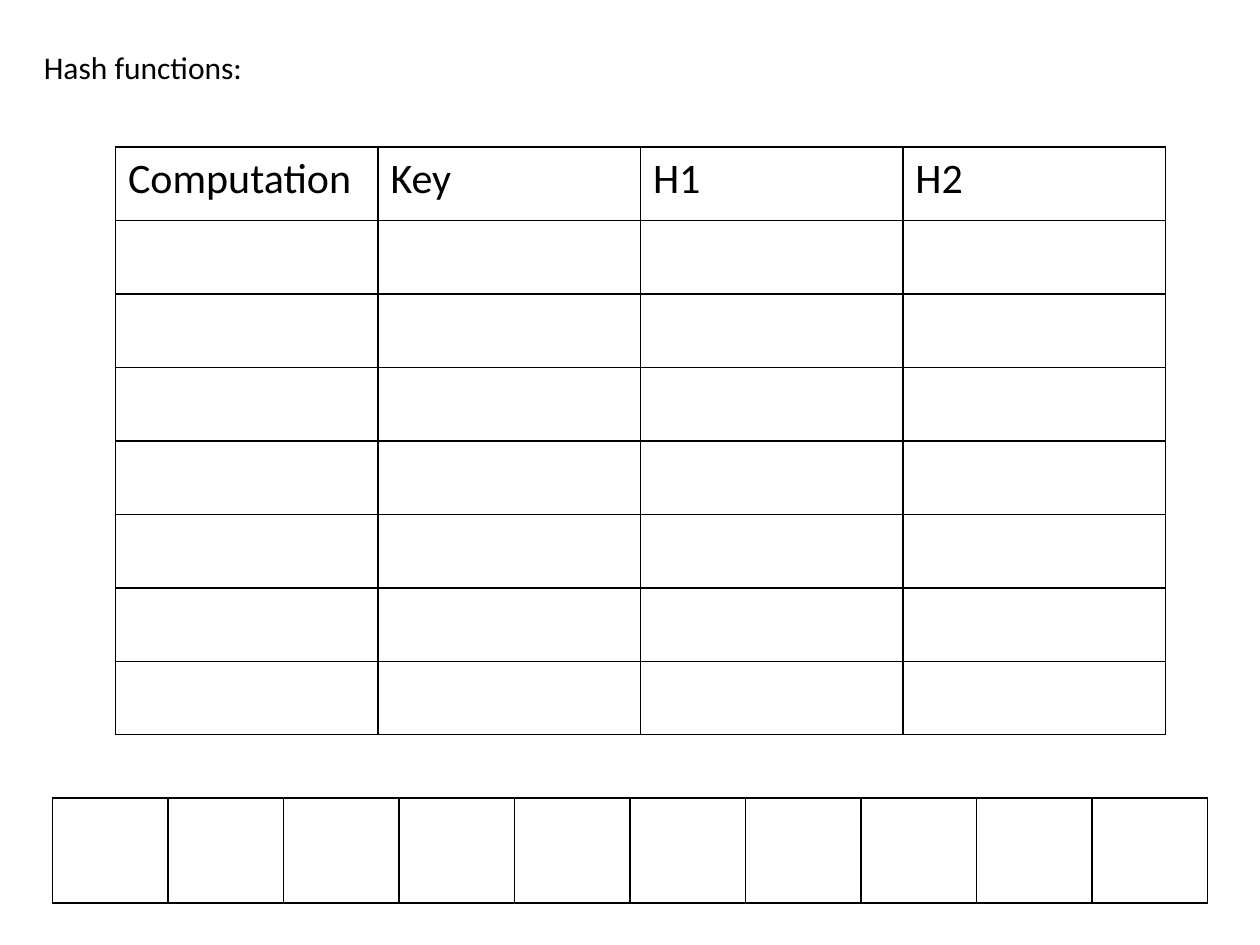
from lxml import etree
from pptx import Presentation
from pptx import util as u
from pptx.dml.color import RGBColor
from pptx.enum import text
from pptx.oxml import ns


def rgb(value):
    return RGBColor.from_string(value)


class Sheet:
    font = "Calibri"
    ink = "000000"
    border = 1
    columns, rows = 120, 90

    def __init__(self, prs):
        self.unit = prs.slide_width / self.columns
        self.s = prs.slides.add_slide(prs.slide_layouts[6])

    def box(self, *cells):
        return [u.Emu(round(n * self.unit)) for n in cells]

    def add_words(self, tf, words, size):
        r = tf.paragraphs[0].add_run()
        r.text = words
        for name, value in {"name": self.font, "size": u.Pt(size)}.items():
            setattr(r.font, name, value)
        r.font.color.rgb = rgb(self.ink)

    def label(self, words, left, top, width, height, size=18):
        tf = self.s.shapes.add_textbox(*self.box(left, top, width, height)).text_frame
        style = {"word_wrap": True, "auto_size": text.MSO_AUTO_SIZE.SHAPE_TO_FIT_TEXT}
        for name, value in style.items():
            setattr(tf, name, value)
        self.add_words(tf, words, size)

    def outline(self, cell):
        tcPr = cell._tc.get_or_add_tcPr()
        for side in "LRTB":
            ln = etree.SubElement(tcPr, ns.qn(f"a:ln{side}"), w=str(u.Pt(self.border)))
            fill = etree.SubElement(ln, ns.qn("a:solidFill"))
            etree.SubElement(fill, ns.qn("a:srgbClr"), val=self.ink)

    def table(self, left, top, cell_width, cell_height, columns, rows, heads=(), size=24):
        area = self.box(left, top, columns * cell_width, rows * cell_height)
        tbl = self.s.shapes.add_table(rows, columns, *area).table
        for name in ("first_row", "horz_banding"):
            setattr(tbl, name, False)
        for column in tbl.columns:
            column.width = self.box(cell_width)[0]
        for row in tbl.rows:
            row.height = self.box(cell_height)[0]
        for cell in tbl.iter_cells():
            self.outline(cell)
            cell.fill.background()
        for i, head in enumerate(heads):
            self.add_words(tbl.cell(0, i).text_frame, head, size)


def main():
    prs = Presentation()
    prs.slide_width, prs.slide_height = u.Inches(10), u.Inches(7.5)
    sheet = Sheet(prs)
    sheet.table(5, 76, 11, 10, columns=10, rows=1)
    sheet.table(11, 14, 25, 7, columns=4, rows=8, heads=("Computation", "Key", "H1", "H2"))
    sheet.label("Hash functions:", 3, 4, 28, 4.8)
    prs.save("out.pptx")


if __name__ == "__main__":
    main()
